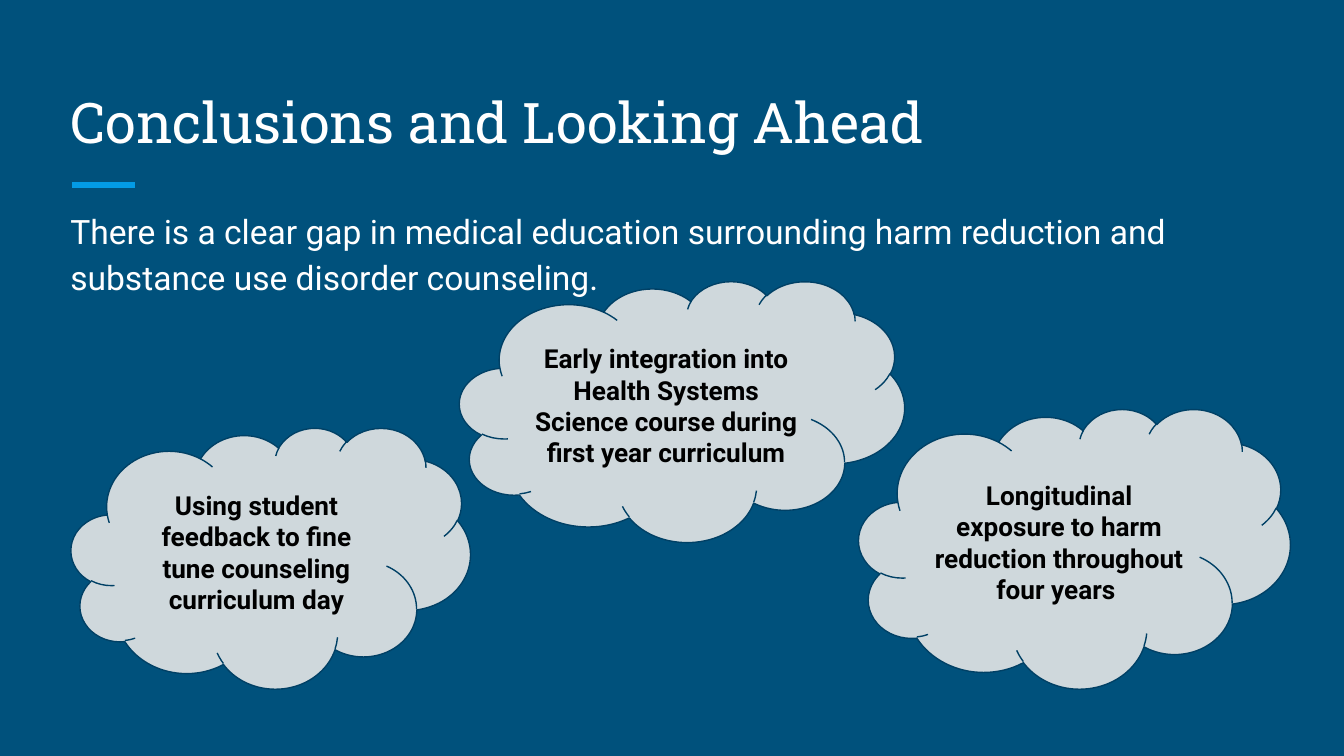
from typing import NamedTuple

from lxml.etree import SubElement
from pptx import Presentation
from pptx.dml.color import RGBColor as Rgb
from pptx.enum.shapes import MSO_CONNECTOR as Wire, MSO_SHAPE as Form
from pptx.enum.text import MSO_ANCHOR as Anchor, PP_ALIGN as Align
from pptx.oxml.ns import qn
from pptx.util import Inches, Pt

WIDE = 10
HIGH = WIDE * 9 / 16
HUES = {
    "back": "00517C",
    "bar": "039BE5",
    "light": "FFFFFF",
    "cloud": "CFD8DC",
    "edge": "004065",
    "dark": "000000",
}


class Box(NamedTuple):
    left: float
    top: float
    width: float
    height: float

    def place(self) -> tuple:
        return (across(self.left), down(self.top), across(self.width), down(self.height))


class Style(NamedTuple):
    font: str
    size: float
    hue: str
    bold: bool = False
    align: Align = Align.LEFT
    anchor: Anchor = Anchor.TOP


class Cloud(NamedTuple):
    text: str
    box: Box


HEAD = Style("Roboto Slab", 30, "light", anchor=Anchor.BOTTOM)
BODY = Style("Roboto", 18, "light")
NOTE = Style("Roboto", 14, "dark", True, Align.CENTER, Anchor.MIDDLE)

CLOUDS = [
    Cloud("Using student feedback to fine tune counseling curriculum day",
          Box(5.3, 56.55, 29.7, 34.5)),
    Cloud("Longitudinal exposure to harm reduction throughout four years ",
          Box(63.9, 54.06, 32.1, 36.98)),
    Cloud("Early integration into Health Systems Science course during first year curriculum",
          Box(34.2, 37.16, 33.1, 34.5)),
]


def across(share: float) -> int:
    return Inches(WIDE * share / 100)


def down(share: float) -> int:
    return Inches(HIGH * share / 100)


def hue(name: str) -> Rgb:
    return Rgb.from_string(HUES[name])


def write(shape, text: str, style: Style):
    frame = shape.text_frame
    frame.text = text
    frame.word_wrap = True
    frame.vertical_anchor = style.anchor
    frame.margin_left = frame.margin_right = Inches(0.1)
    frame.margin_top = frame.margin_bottom = Inches(0.1)
    para = frame.paragraphs[0]
    para.alignment = style.align
    font = para.runs[0].font
    font.name, font.size, font.bold = style.font, Pt(style.size), style.bold
    font.color.rgb = hue(style.hue)
    return para


def add_text(slide, text: str, box: Box, style: Style):
    return write(slide.shapes.add_textbox(*box.place()), text, style)


def add_bar(slide, left: float, right: float, top: float) -> None:
    bar = slide.shapes.add_connector(
        Wire.STRAIGHT, across(left), down(top), across(right), down(top))
    bar.line.color.rgb = hue("bar")
    bar.line.width = Pt(3)
    SubElement(bar._element.spPr, qn("a:effectLst"))


def add_cloud(slide, cloud: Cloud) -> None:
    shape = slide.shapes.add_shape(Form.CLOUD, *cloud.box.place())
    shape.shadow.inherit = False
    shape.fill.solid()
    shape.fill.fore_color.rgb = hue("cloud")
    shape.line.color.rgb = hue("edge")
    shape.line.width = Pt(0.75)
    write(shape, cloud.text, NOTE)


def main() -> None:
    deck = Presentation()
    deck.slide_width, deck.slide_height = Inches(WIDE), Inches(HIGH)
    slide = deck.slides.add_slide(deck.slide_layouts[6])
    slide.background.fill.solid()
    slide.background.fill.fore_color.rgb = hue("back")
    add_bar(slide, 5.37, 10.03, 24.5)
    add_text(slide, "Conclusions and Looking Ahead", Box(4.25, 8.9, 91.5, 13.35), HEAD)
    para = add_text(
        slide,
        "There is a clear gap in medical education surrounding harm reduction "
        "and substance use disorder counseling.",
        Box(4.25, 25.3, 85.7, 16.53), BODY)
    para.line_spacing = 1.15
    para.space_after = Pt(12)
    for cloud in CLOUDS:
        add_cloud(slide, cloud)
    deck.save("out.pptx")


if __name__ == "__main__":
    main()
